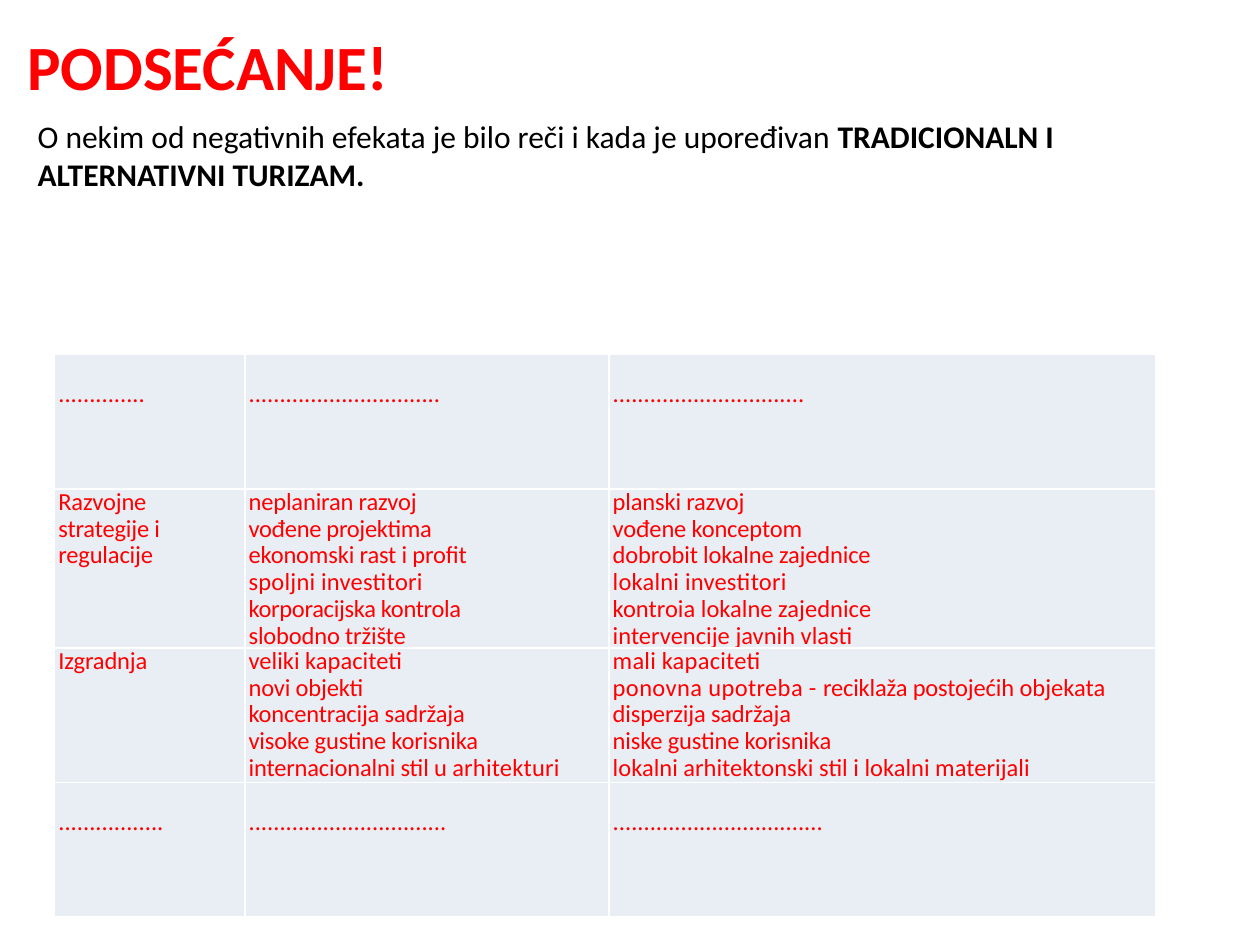
from lxml import etree
from pptx import Presentation
from pptx.dml.color import RGBColor
from pptx.enum.text import MSO_AUTO_SIZE
from pptx.oxml.ns import qn
from pptx.util import Pt

GROW = MSO_AUTO_SIZE.SHAPE_TO_FIT_TEXT
FONT = "Calibri"
RED, BLACK, WHITE, PALE = "FF0000", "000000", "FFFFFF", "E9EDF4"
COLS = (108.72, 208.08, 312.48)
ROW_H = 77
DROP = 15.4  # one line of 14 pt text at 90 % spacing

# Each row: top margin, then cells; a cell is a list of lines,
# a line is a list of (text, letter spacing in hundredths of a point)
ROWS = [
    (DROP, [[[("." * n, 0)]] for n in (14, 31, 31)]),
    (0, [
        [[("Razvojne strategije i regulacije", -10)]],
        [[("neplaniran razvoj", -10)],
         [("vođene projektima", -20)],
         [("ekonomski rast i profit", -10)],
         [("spoljni investitori", 10)],
         [("korporacijska kontrola", -20)],
         [("slobodno tržište", -10)]],
        [[("planski razvoj", -10)],
         [("vođene konceptom", -10)],
         [("dobrobit lokalne zajednice", -10)],
         [("lokalni investitori", 10)],
         [("kontroia lokalne zajednice", 0)],
         [("intervencije javnih vlasti", 0)]],
    ]),
    (0, [
        [[("Izgradnja", -10)]],
        [[("veliki kapaciteti", 0)],
         [("novi objekti", -10)],
         [("koncentracija sadržaja", -10)],
         [("visoke gustine korisnika", -10)],
         [("internacionalni stil u ", -10), ("arhitekturi", 10)]],
        [[("mali kapaciteti", 10)],
         [("ponovna upotreba - ", 20), ("reciklaža postojećih ", -10),
          ("objekata", 0)],
         [("disperzija sadržaja", -10)],
         [("niske gustine korisnika", -10)],
         [("lokalni arhitektonski stil i lokalni materijali", 0)]],
    ]),
    (DROP, [[[("." * n, 0)]] for n in (17, 32, 34)]),
]


def color(code):
    return RGBColor.from_string(code)


def style(para, size, code):
    para.font.name = FONT
    para.font.size = Pt(size)
    para.font.color.rgb = color(code)


def add_text(slide, box, runs, size, code, wrap=True):
    """Add a one-paragraph text box from (text, bold) runs."""
    frame = slide.shapes.add_textbox(*map(Pt, box)).text_frame
    frame.word_wrap = wrap
    frame.auto_size = GROW
    para = frame.paragraphs[0]
    style(para, size, code)
    for text, bold in runs:
        run = para.add_run()
        run.text = text
        run.font.bold = bold


def add_edges(cell, code, width):
    props = cell._tc.get_or_add_tcPr()
    for spot, side in enumerate(("a:lnL", "a:lnR", "a:lnT", "a:lnB")):
        line = etree.Element(qn(side), w=str(Pt(width)))
        fill = etree.SubElement(line, qn("a:solidFill"))
        etree.SubElement(fill, qn("a:srgbClr"), val=code)
        props.insert(spot, line)


def fill_cell(cell, lines, top):
    cell.margin_left = cell.margin_right = Pt(2.16)
    cell.margin_top, cell.margin_bottom = Pt(top), 0
    cell.fill.solid()
    cell.fill.fore_color.rgb = color(PALE)
    add_edges(cell, WHITE, 1)
    frame = cell.text_frame
    for spot, line in enumerate(lines):
        para = frame.add_paragraph() if spot else frame.paragraphs[0]
        style(para, 14, RED)
        para.line_spacing = 0.9
        for text, gap in line:
            run = para.add_run()
            run.text = text
            run._r.get_or_add_rPr().set("spc", str(gap))


def add_grid(slide, left, top):
    table = slide.shapes.add_table(
        len(ROWS), len(COLS), Pt(left), Pt(top),
        Pt(sum(COLS)), Pt(ROW_H * len(ROWS))).table
    table.first_row = table.horz_banding = False
    for col, width in zip(table.columns, COLS):
        col.width = Pt(width)
    for row, (drop, cells) in zip(table.rows, ROWS):
        row.height = Pt(ROW_H)
        for cell, lines in zip(row.cells, cells):
            fill_cell(cell, lines, drop)


def main():
    deck = Presentation()
    deck.slide_width, deck.slide_height = Pt(720), Pt(540)
    slide = deck.slides.add_slide(deck.slide_layouts[6])

    # Title
    add_text(slide, (8.64, 12.24, 222.5, 51), [("PODSEĆANJE!", True)],
             36, RED, wrap=False)
    # Comparison table
    add_grid(slide, 31.2, 202.3)
    # Lead sentence
    add_text(slide, (14.4, 63.4, 663.1, 51), [
        ("O nekim od negativnih efekata je bilo reči i kada je upoređivan ",
         False),
        ("TRADICIONALN I ALTERNATIVNI TURIZAM.", True)], 18, BLACK)

    deck.save("out.pptx")


if __name__ == "__main__":
    main()
